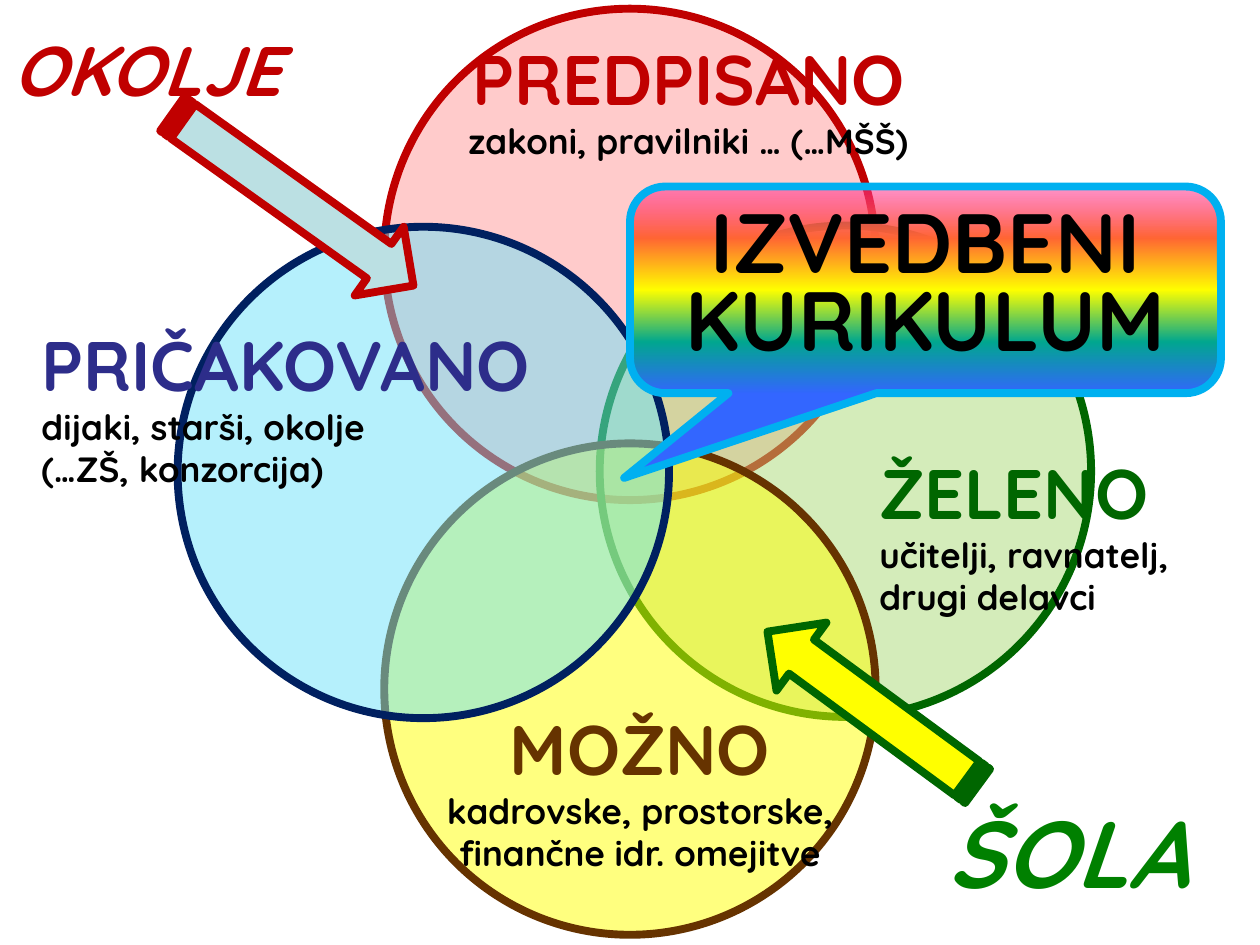
from pptx import Presentation
from pptx.dml.color import RGBColor
from pptx.enum.shapes import MSO_SHAPE as Shape
from pptx.enum.text import MSO_ANCHOR as Anchor, MSO_AUTO_SIZE as AutoSize, PP_ALIGN as Align
from pptx.oxml.ns import qn
from pptx.util import Pt
from lxml.etree import SubElement

FONT = "Quicksand"
BLACK = "000000"
RED, GREEN, BROWN = "C00000", "006600", "663300"

DIAMETER = 280.8
CIRCLES = [  # left, top, fill, outline
    (219.6, 5, "FF9999", RED),
    (342.7, 128.9, "ABDB77", GREEN),
    (219.6, 253.4, "FFFF00", BROWN),
    (101.5, 129.6, "6CE2FA", "002060"),
]
LABELS = [  # box, heading, heading colour, details, alignment
    ((16.6, 180, 320.4, 104.4), "PRIČAKOVANO", "2D2D8A",
     ["dijaki, starši, okolje", "(…ZŠ, konzorcija)"], Align.LEFT),
    ((224.6, 16.6, 337.7, 79.9), "PREDPISANO", RED,
     ["zakoni, pravilniki … (…MŠŠ)"], Align.CENTER),
    ((495.4, 253.4, 202.3, 104.4), "ŽELENO", GREEN,
     ["učitelji, ravnatelj, drugi delavci"], Align.LEFT),
    ((241.9, 399.6, 247.7, 104.4), "MOŽNO", BROWN,
     ["kadrovske, prostorske, finančne idr. omejitve"], Align.CENTER),
]
ARROWS = [  # box, rotation, fill, outline
    ((82.8, 90, 169.2, 48.2), 35.5, "BBE0E3", RED),
    ((424.1, 380.9, 149, 48.2), 216.3, "FFFF00", GREEN),
]
SOURCES = [  # box, text, size, colour
    ((0, 11.5, 196.6, 55.4), "OKOLJE", 40, RED),
    ((534.2, 450, 185.8, 72.7), "ŠOLA", 54, "008000"),
]
RAINBOW = [  # position in percent, colour, opacity in percent
    (0, "FF3399", 52), (25, "FF6633", 100), (50, "FFFF00", 100),
    (75, "01A78F", 100), (100, "3366FF", 100),
]


def rgb(value):
    return RGBColor.from_string(value)


def add_outlined(shapes, kind, box, outline):
    shape = shapes.add_shape(kind, *map(Pt, box))
    shape.shadow.inherit = False
    shape.line.color.rgb = rgb(outline)
    shape.line.width = Pt(4.5)
    return shape


def fill_solid(shape, color):
    shape.fill.solid()
    shape.fill.fore_color.rgb = rgb(color)


def set_opacity(color_element, percent):
    SubElement(color_element, qn("a:alpha")).set("val", str(percent * 1000))


def fill_gradient(shape, stops):
    """Fill from top to bottom through any number of stops."""
    shape.fill.gradient()
    shape.fill.gradient_angle = 270
    stop_list = next(shape._element.spPr.iter(qn("a:gsLst")))
    for old_stop in list(stop_list):
        stop_list.remove(old_stop)
    for position, color, opacity in stops:
        stop = SubElement(stop_list, qn("a:gs"))
        stop.set("pos", str(position * 1000))
        color_element = SubElement(stop, qn("a:srgbClr"))
        color_element.set("val", color)
        if opacity < 100:
            set_opacity(color_element, opacity)


def write_line(para, text, color, alignment=Align.LEFT, **formats):
    para.alignment = alignment
    span = para.add_run()
    span.text = text
    span.font.color.rgb = rgb(color)
    for name, value in {"name": FONT, "bold": True, **formats}.items():
        setattr(span.font, name, value)


def add_text_frame(page, box):
    frame = page.shapes.add_textbox(*map(Pt, box)).text_frame
    frame.word_wrap = True
    frame.auto_size = AutoSize.SHAPE_TO_FIT_TEXT
    return frame


def add_circles(page):
    group = page.shapes.add_group_shape()
    for left, top, color, outline in CIRCLES:
        box = (left, top, DIAMETER, DIAMETER)
        circle = add_outlined(group.shapes, Shape.OVAL, box, outline)
        fill_solid(circle, color)
        fill_element = circle._element.spPr.find(qn("a:solidFill"))
        set_opacity(fill_element[0], 50)


def add_label(page, box, heading, color, details, alignment):
    frame = add_text_frame(page, box)
    write_line(frame.paragraphs[0], heading, color, alignment, size=Pt(40))
    for detail in details:
        write_line(frame.add_paragraph(), detail, BLACK, alignment, size=Pt(20))


def add_arrow(page, box, rotation, color, outline):
    arrow = add_outlined(page.shapes, Shape.STRIPED_RIGHT_ARROW, box, outline)
    arrow.rotation = rotation
    fill_solid(arrow, color)


def add_source(page, box, text, size, color):
    frame = add_text_frame(page, box)
    write_line(frame.paragraphs[0], text, color, size=Pt(size), italic=True)


def add_callout(page, box):
    callout = add_outlined(page.shapes, Shape.ROUNDED_RECTANGULAR_CALLOUT, box, "00B0F0")
    for index, value in enumerate((-0.51, 0.91, 0.17)):
        callout.adjustments[index] = value
    fill_gradient(callout, RAINBOW)
    frame = callout.text_frame
    frame.word_wrap = True
    frame.vertical_anchor = Anchor.MIDDLE
    para = frame.paragraphs[0]
    para.line_spacing = Pt(45)
    write_line(para, "IZVEDBENI KURIKULUM", BLACK, Align.CENTER, size=Pt(48))


def main():
    deck = Presentation()
    deck.slide_width, deck.slide_height = Pt(720), Pt(540)
    page = deck.slides.add_slide(deck.slide_layouts[6])
    add_circles(page)
    for label in LABELS:
        add_label(page, *label)
    for arrow in ARROWS:
        add_arrow(page, *arrow)
    for source in SOURCES:
        add_source(page, *source)
    add_callout(page, (360, 106.6, 337.7, 118.1))
    deck.save("out.pptx")


if __name__ == "__main__":
    main()
